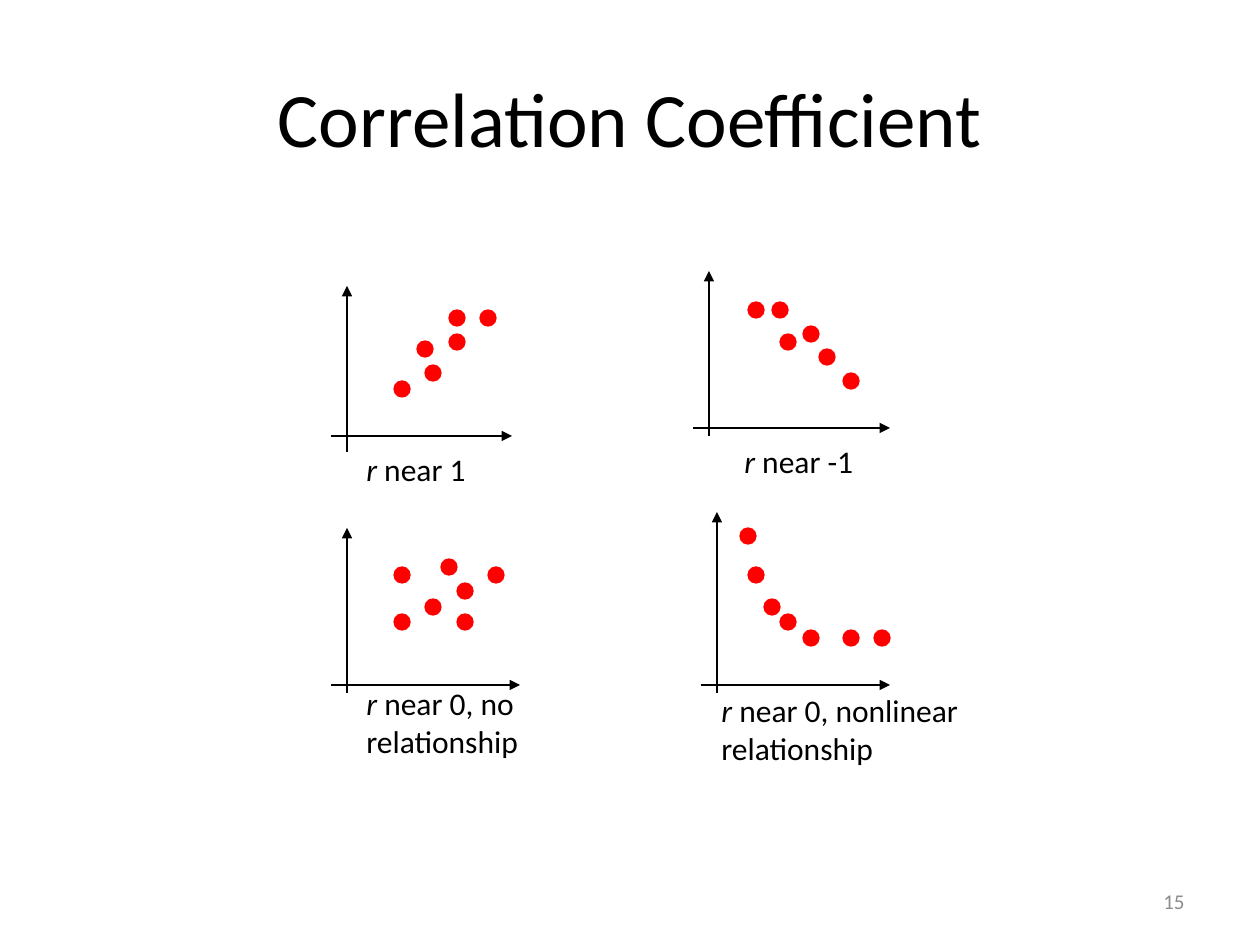
from lxml import etree
from pptx import Presentation
from pptx.dml.color import RGBColor
from pptx.enum.shapes import MSO_CONNECTOR, MSO_SHAPE
from pptx.enum.text import MSO_ANCHOR, PP_ALIGN
from pptx.oxml.ns import qn
from pptx.util import Inches, Pt

STRAIGHT = MSO_CONNECTOR.STRAIGHT
OVAL = MSO_SHAPE.OVAL
TOP, MIDDLE = MSO_ANCHOR.TOP, MSO_ANCHOR.MIDDLE
LEFT, CENTER, RIGHT = PP_ALIGN.LEFT, PP_ALIGN.CENTER, PP_ALIGN.RIGHT
BLACK = RGBColor(0x00, 0x00, 0x00)
GRAY = RGBColor(0x8C, 0x8C, 0x8C)
RED = RGBColor(0xFF, 0x00, 0x00)
SCALE = Inches(1) / 126
DOT = 16


def px(*lengths):
    return [round(length * SCALE) for length in lengths]


def add_text(box, runs, size, color, align, anchor):
    frame = slide.shapes.add_textbox(*px(*box)).text_frame
    frame.word_wrap = True
    frame.vertical_anchor = anchor
    paragraph = frame.paragraphs[0]
    paragraph.alignment = align
    for text, italic in runs:
        run = paragraph.add_run()
        run.text = text
        run.font.color.rgb = color
        style = {"name": "Calibri", "size": Pt(size), "italic": italic}
        for attribute, value in style.items():
            setattr(run.font, attribute, value)


deck = Presentation()
deck.slide_width, deck.slide_height = px(1260, 945)
slide = deck.slides.add_slide(deck.slide_layouts[6])

add_text((63, 38, 1134, 158), [("Correlation Coefficient", False)], 44, BLACK, CENTER, MIDDLE)
add_text((903, 876, 294, 50), [("15", False)], 12, GRAY, RIGHT, MIDDLE)

plots = [
    {
        "axes": [(347, 452, 347, 286), (331, 436, 512, 436)],
        "points": [(394, 381), (417, 341), (425, 365), (449, 334), (480, 310), (449, 310)],
        "caption": (" near 1", (354, 444, 213, 50)),
    },
    {
        "axes": [(709, 436, 709, 271), (693, 428, 890, 428)],
        "points": [(748, 302), (780, 334), (803, 326), (819, 349), (843, 373), (772, 302)],
        "caption": (" near -1", (732, 436, 213, 50)),
    },
    {
        "axes": [(347, 693, 347, 528), (331, 685, 520, 685)],
        "points": [(394, 567), (457, 583), (425, 599), (441, 559), (457, 614), (394, 614), (488, 567)],
        "caption": (" near 0, no relationship", (354, 678, 284, 89)),
    },
    {
        "axes": [(717, 693, 717, 512), (701, 685, 890, 685)],
        "points": [(740, 528), (748, 567), (764, 599), (780, 614), (803, 630), (843, 630), (874, 630)],
        "caption": (" near 0, nonlinear relationship", (709, 685, 347, 89)),
    },
]

for plot in plots:
    for ends in plot["axes"]:
        axis = slide.shapes.add_connector(STRAIGHT, *px(*ends))
        axis.line.color.rgb = BLACK
        axis.line.width = Pt(0.75)
        etree.SubElement(axis.line._get_or_add_ln(), qn("a:tailEnd"), type="triangle")
        etree.SubElement(axis._element.spPr, qn("a:effectLst"))
    for left, top in plot["points"]:
        point = slide.shapes.add_shape(OVAL, *px(left, top, DOT, DOT))
        point.shadow.inherit = False
        point.fill.solid()
        point.fill.fore_color.rgb = RED
        point.line.color.rgb = RED
        point.line.width = Pt(0.75)
    description, box = plot["caption"]
    add_text(box, [("r", True), (description, False)], 18, BLACK, LEFT, TOP)

deck.save("out.pptx")
